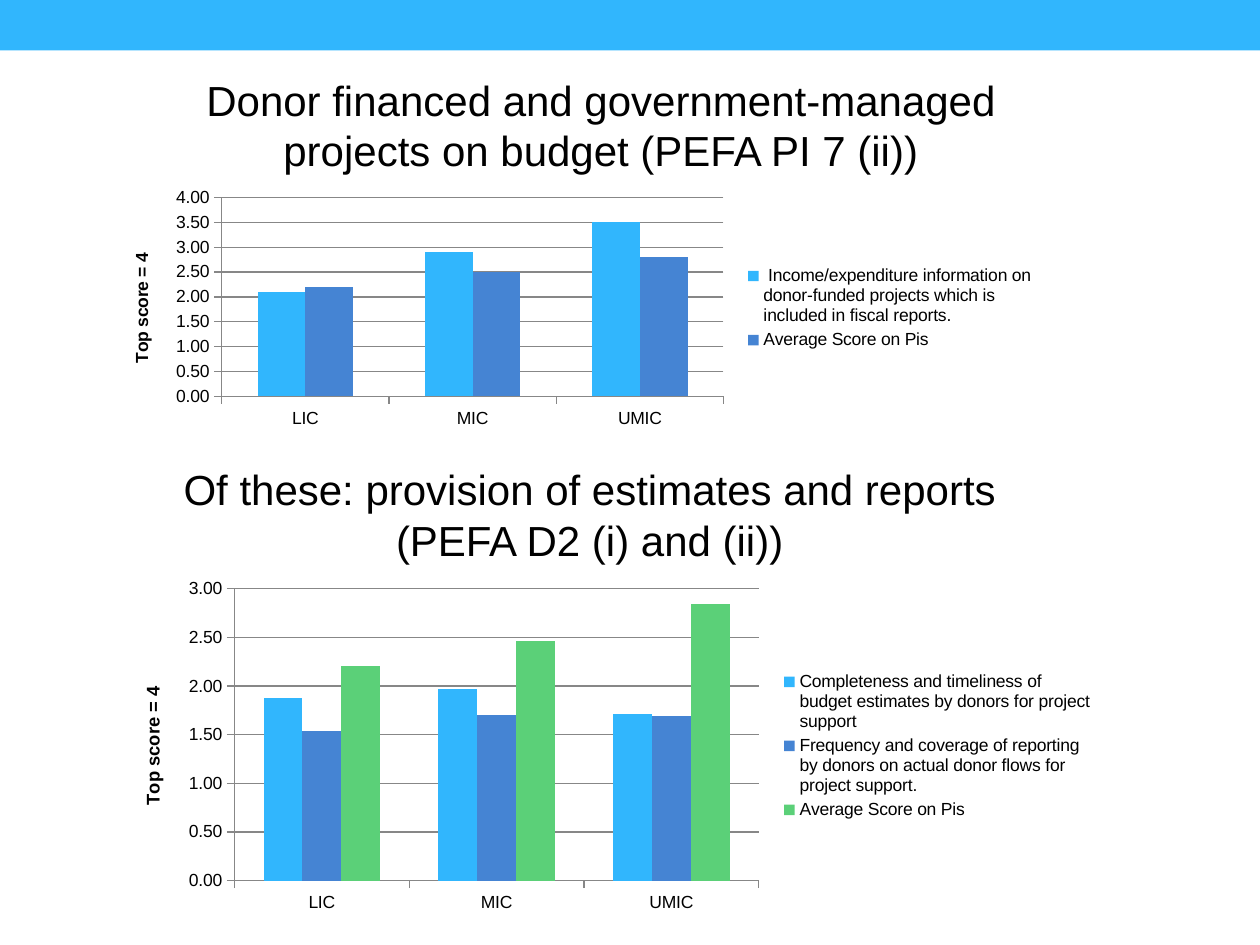
"""Build a slide with two charts of PEFA scores by country income group."""
import pptx
import pptx.chart.data
import pptx.dml.color
import pptx.enum.chart
import pptx.enum.shapes
import pptx.enum.text
import pptx.util

Pt = pptx.util.Pt
RGBColor = pptx.dml.color.RGBColor

SKY = RGBColor(0x31, 0xB6, 0xFD)
BLUE = RGBColor(0x45, 0x84, 0xD3)
GREEN = RGBColor(0x5B, 0xD0, 0x78)
BLACK = RGBColor(0x00, 0x00, 0x00)
GRAY = RGBColor(0x87, 0x87, 0x87)

SERIES_COLORS = (SKY, BLUE, GREEN)
INCOME_GROUPS = ("LIC", "MIC", "UMIC")
FONT = "Arial"

PROJECT_SCORES = (
    (" Income/expenditure information on donor-funded projects which is "
     "included in fiscal reports.", (2.1, 2.9, 3.5)),
    ("Average Score on Pis", (2.2, 2.5, 2.8)),
)
REPORTING_SCORES = (
    ("Completeness and timeliness of budget estimates by donors for project "
     "support", (1.88, 1.97, 1.71)),
    ("Frequency and coverage of reporting by donors on actual donor flows for "
     "project support.", (1.54, 1.7, 1.69)),
    ("Average Score on Pis", (2.21, 2.46, 2.84)),
)


def style_font(font, size, bold=False):
    """Apply the slide's typeface and text colour."""
    font.name = FONT
    font.size = Pt(size)
    font.bold = bold
    font.color.rgb = BLACK


def add_banner(slide, width):
    """Add the coloured band along the top edge."""
    banner = slide.shapes.add_shape(
        pptx.enum.shapes.MSO_SHAPE.RECTANGLE, 0, 0, width, Pt(28.8))
    banner.shadow.inherit = False
    banner.fill.solid()
    banner.fill.fore_color.rgb = SKY
    banner.line.fill.background()


def add_heading(slide, text, left, top):
    """Add a centred two-line heading."""
    heading = slide.shapes.add_textbox(Pt(left), Pt(top), Pt(532.8), Pt(65.4))
    frame = heading.text_frame
    frame.word_wrap = True
    frame.auto_size = pptx.enum.text.MSO_AUTO_SIZE.SHAPE_TO_FIT_TEXT
    paragraph = frame.paragraphs[0]
    paragraph.text = text
    paragraph.alignment = pptx.enum.text.PP_ALIGN.CENTER
    style_font(paragraph.font, 24)


def style_axis(axis):
    """Give an axis gray lines and outside tick marks."""
    axis.format.line.color.rgb = GRAY
    axis.major_tick_mark = pptx.enum.chart.XL_TICK_MARK.OUTSIDE
    axis.minor_tick_mark = pptx.enum.chart.XL_TICK_MARK.NONE


def style_value_axis(axis, maximum, title_size):
    """Set the score scale, gridlines and title."""
    style_axis(axis)
    axis.minimum_scale = 0
    axis.maximum_scale = maximum
    axis.major_unit = 0.5
    axis.major_gridlines.format.line.color.rgb = GRAY
    axis.tick_labels.number_format = "0.00"
    axis.tick_labels.number_format_is_linked = False
    paragraph = axis.axis_title.text_frame.paragraphs[0]
    paragraph.text = "Top score = 4"
    style_font(paragraph.font, title_size, bold=True)


def add_score_chart(slide, scores, box, maximum, title_size):
    """Add a clustered column chart of scores by income group."""
    chart_data = pptx.chart.data.CategoryChartData(number_format="0.00")
    chart_data.categories = INCOME_GROUPS
    for name, values in scores:
        chart_data.add_series(name, values)
    chart = slide.shapes.add_chart(
        pptx.enum.chart.XL_CHART_TYPE.COLUMN_CLUSTERED,
        *(Pt(length) for length in box), chart_data).chart
    style_font(chart.font, 10)
    chart.has_title = False
    chart.has_legend = True
    chart.legend.position = pptx.enum.chart.XL_LEGEND_POSITION.RIGHT
    chart.legend.include_in_layout = False
    style_axis(chart.category_axis)
    style_value_axis(chart.value_axis, maximum, title_size)
    plot = chart.plots[0]
    plot.vary_by_categories = False
    plot.gap_width = 150
    plot.overlap = 0
    for series, color in zip(plot.series, SERIES_COLORS):
        series.format.fill.solid()
        series.format.fill.fore_color.rgb = color


def main():
    """Build and save the slide."""
    presentation = pptx.Presentation()
    presentation.slide_width = Pt(720)
    presentation.slide_height = Pt(540)
    slide = presentation.slides.add_slide(presentation.slide_layouts[6])
    add_banner(slide, presentation.slide_width)
    add_score_chart(slide, REPORTING_SCORES, (65.5, 326.9, 566.6, 198.7), 3, 10.5)
    add_heading(slide, "Of these: provision of estimates and reports "
                "(PEFA D2 (i) and (ii))", 70.6, 261.4)
    add_score_chart(slide, PROJECT_SCORES, (59.8, 104.4, 538.6, 143.3), 4, 10)
    add_heading(slide, "Donor financed and government-managed projects on "
                "budget (PEFA PI 7 (ii))", 77, 38.9)
    presentation.save("out.pptx")


if __name__ == "__main__":
    main()
